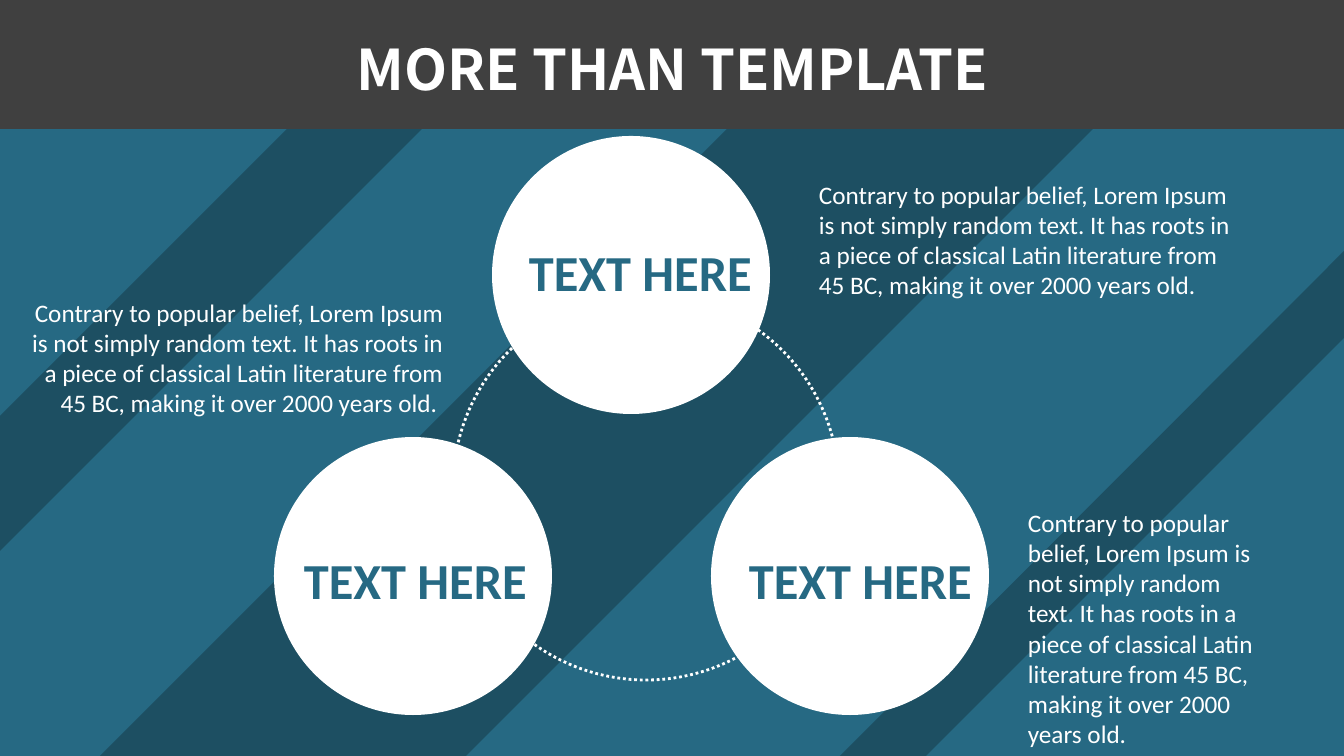
from pptx import Presentation
from pptx import util as u
from pptx.dml.color import RGBColor
from pptx.enum import dml, shapes, text

HUES = {"teal": "266983", "deep": "1D4F62", "gray": "404040", "white": "FFFFFF"}
SCALE = 12192000 / 1344
ALIGN = text.PP_ALIGN
OVAL = shapes.MSO_SHAPE.OVAL


def px(*vals):
    return [u.Emu(round(v * SCALE)) for v in vals]


def write(box, words, size, hue, align, bold=False, face="Calibri"):
    frame = box.text_frame
    frame.text = words
    look = {"word_wrap": True, "auto_size": text.MSO_AUTO_SIZE.NONE,
            "vertical_anchor": text.MSO_ANCHOR.TOP}
    for key, val in look.items():
        setattr(frame, key, val)
    para = frame.paragraphs[0]
    para.alignment = align
    font = para.runs[0].font
    for key, val in {"size": u.Pt(size), "bold": bold, "name": face}.items():
        setattr(font, key, val)
    font.color.rgb = RGBColor.from_string(HUES[hue])


deck = Presentation()
deck.slide_width, deck.slide_height = px(1344, 756)
slide = deck.slides.add_slide(deck.slide_layouts[5])
items = slide.shapes
back = slide.background.fill
back.solid()
back.fore_color.rgb = RGBColor.from_string(HUES["teal"])

stripes = [
    [(416, 0), (551, 0), (0, 551), (0, 416)],
    [(856, 0), (1222, 0), (466, 756), (100, 756)],
    [(1344, 251), (1344, 338), (926, 756), (840, 756)],
]
solids = []
for first, *rest in stripes:
    path = items.build_freeform(*first, scale=SCALE)
    path.add_line_segments(rest, close=True)
    solids.append((path.convert_to_shape(), "deep"))

band = items.add_shape(shapes.MSO_SHAPE.RECTANGLE, *px(0, 0, 1344, 129))
solids.append((band, "gray"))

title = items.title
for key, val in zip(("left", "top", "width", "height"), px(264, 29, 816, 78)):
    setattr(title, key, val)
write(title, "MORE THAN TEMPLATE", 40, "white", ALIGN.CENTER, True, "Noto Sans CJK SC")
band.element.addnext(title.element)

ring = items.add_shape(OVAL, *px(453, 294, 386, 386))
ring.shadow.inherit = False
ring.fill.background()
ring.line.color.rgb = RGBColor.from_string(HUES["white"])
ring.line.width = u.Pt(2)
ring.line.dash_style = dml.MSO_LINE.ROUND_DOT

for left, top in [(274, 437), (492, 136), (711, 437)]:
    disc = items.add_shape(OVAL, *px(left, top, 278, 278))
    solids.append((disc, "white"))

for shape, hue in solids:
    shape.shadow.inherit = False
    shape.fill.solid()
    shape.fill.fore_color.rgb = RGBColor.from_string(HUES[hue])
    shape.line.fill.background()

for left, top in [(492, 236), (712, 544), (267, 544)]:
    label = items.add_textbox(*px(left, top, 297, 72))
    write(label, "TEXT HERE", 36, "teal", ALIGN.CENTER, True)

LOREM = ("Contrary to popular belief, Lorem Ipsum is not simply random text. "
         "It has roots in a piece of classical Latin literature from 45 BC, "
         "making it over 2000 years old.")
notes = [
    ((809, 174, 432, 132), LOREM, ALIGN.LEFT),
    ((21, 292, 432, 132), LOREM + " ", ALIGN.RIGHT),
    ((1018, 502, 261, 254), LOREM, ALIGN.LEFT),
]
for place, words, align in notes:
    write(items.add_textbox(*px(*place)), words, 18, "white", align)

deck.save("out.pptx")
